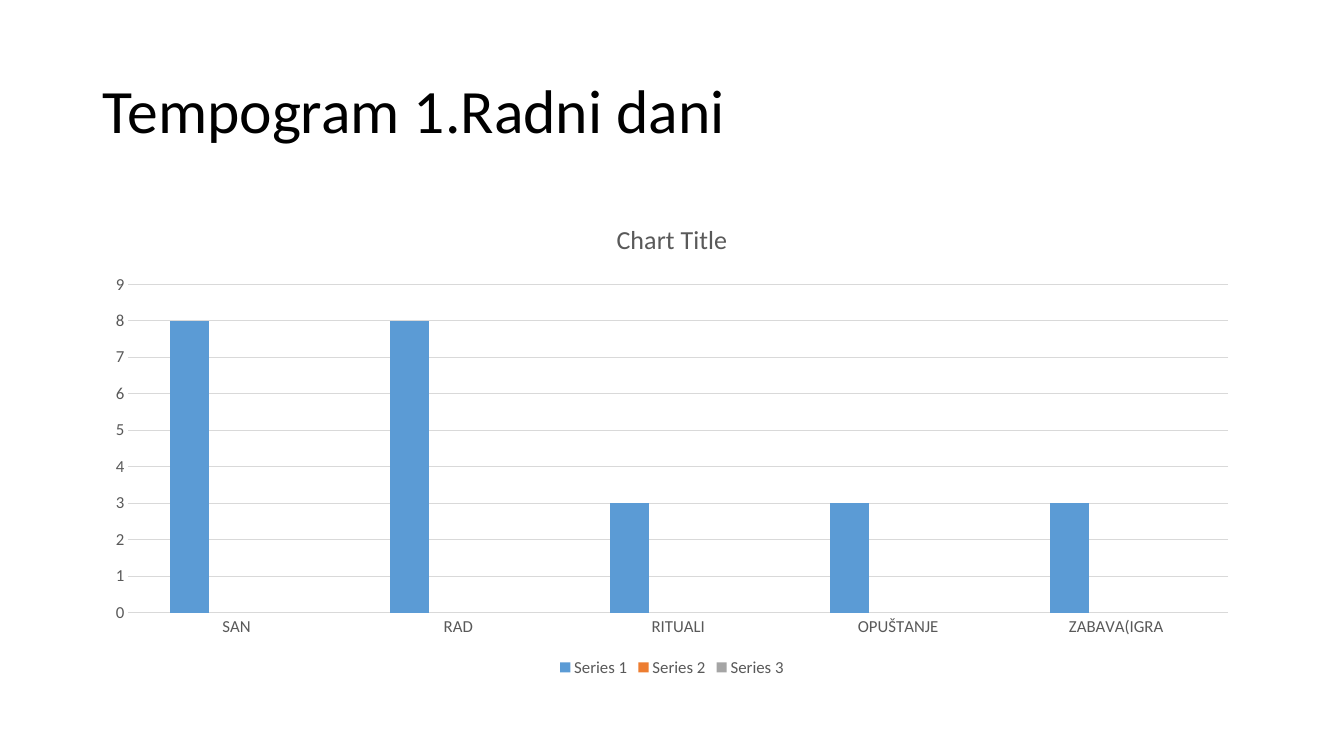
from pptx import Presentation
from pptx.chart.data import CategoryChartData
from pptx.dml.color import RGBColor
from pptx.enum.chart import XL_CHART_TYPE, XL_LEGEND_POSITION, XL_TICK_MARK
from pptx.enum.text import MSO_ANCHOR, PP_ALIGN
from pptx.util import Inches, Pt

CLUSTERED = XL_CHART_TYPE.COLUMN_CLUSTERED
BOTTOM = XL_LEGEND_POSITION.BOTTOM
NO_TICK = XL_TICK_MARK.NONE

HEADING = "Tempogram 1.Radni dani"
CHART_TITLE = "Chart Title"
ACTIVITIES = ["SAN ", "RAD", "RITUALI", "OPUŠTANJE", "ZABAVA(IGRA "]
HOURS = {
    "Series 1": [8, 8, 3, 3, 3],
    "Series 2": [None] * len(ACTIVITIES),
    "Series 3": [None] * len(ACTIVITIES),
}
COLORS = {
    "heading": "000000",
    "label": "595959",
    "grid": "D9D9D9",
    "Series 1": "5B9BD5",
    "Series 2": "ED7D31",
    "Series 3": "A5A5A5",
}
FONT = "Calibri"
SLIDE_W, SLIDE_H = 13.33, 7.5
MARGIN = 0.92
CONTENT_W = SLIDE_W - 2 * MARGIN
HEADING_BOX = [Inches(n) for n in (MARGIN, 0.4, CONTENT_W, 1.45)]
CHART_BOX = [Inches(n) for n in (MARGIN, 2, CONTENT_W, 4.76)]


def style_font(font, size, color):
    font.name = FONT
    font.size = Pt(size)
    font.bold = False
    font.color.rgb = RGBColor.from_string(COLORS[color])


def style_line(line):
    line.color.rgb = RGBColor.from_string(COLORS["grid"])
    line.width = Pt(0.75)


def add_heading(slide):
    heading = slide.shapes.title
    heading.left, heading.top, heading.width, heading.height = HEADING_BOX
    heading.text_frame.word_wrap = True
    heading.text_frame.vertical_anchor = MSO_ANCHOR.MIDDLE
    line = heading.text_frame.paragraphs[0]
    line.alignment = PP_ALIGN.LEFT
    line.line_spacing = 0.9
    run = line.add_run()
    run.text = HEADING
    style_font(run.font, 44, "heading")


def add_hours_chart(slide):
    data = CategoryChartData()
    data.categories = ACTIVITIES
    for name, hours in HOURS.items():
        data.add_series(name, hours)
    chart = slide.shapes.add_chart(CLUSTERED, *CHART_BOX, data).chart
    style_font(chart.font, 10, "heading")

    chart.has_title = True
    run = chart.chart_title.text_frame.paragraphs[0].add_run()
    run.text = CHART_TITLE
    style_font(run.font, 18.6, "label")
    chart.chart_title.include_in_layout = False

    chart.has_legend = True
    chart.legend.position = BOTTOM
    chart.legend.include_in_layout = False
    style_font(chart.legend.font, 12, "label")

    for axis in (chart.category_axis, chart.value_axis):
        axis.major_tick_mark = axis.minor_tick_mark = NO_TICK
        style_font(axis.tick_labels.font, 12, "label")
    style_line(chart.category_axis.format.line)
    hours_axis = chart.value_axis
    hours_axis.format.line.fill.background()
    hours_axis.has_major_gridlines = True
    style_line(hours_axis.major_gridlines.format.line)

    plot = chart.plots[0]
    plot.gap_width, plot.overlap = 219, -27
    plot.vary_by_categories = False
    for series in plot.series:
        series.format.fill.solid()
        series.format.fill.fore_color.rgb = RGBColor.from_string(COLORS[series.name])
        series.invert_if_negative = False


def main():
    deck = Presentation()
    deck.slide_width, deck.slide_height = Inches(SLIDE_W), Inches(SLIDE_H)
    slide = deck.slides.add_slide(deck.slide_layouts.get_by_name("Title Only"))
    add_heading(slide)
    add_hours_chart(slide)
    deck.save("out.pptx")


if __name__ == "__main__":
    main()
